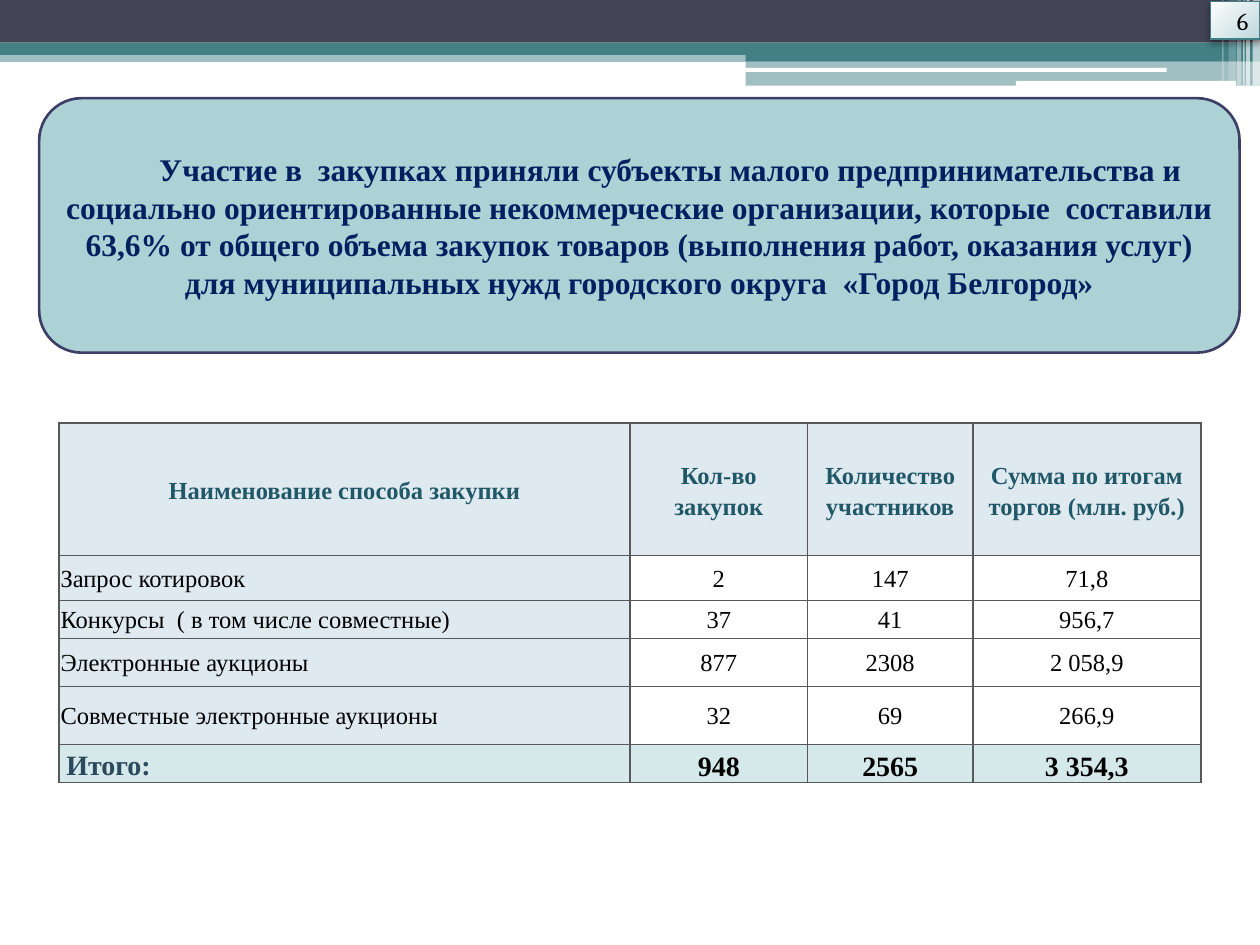
from lxml import etree
from pptx import Presentation
from pptx.dml.color import RGBColor
from pptx.enum.shapes import MSO_SHAPE
from pptx.enum.text import MSO_ANCHOR, PP_ALIGN
from pptx.oxml.ns import qn
from pptx.util import Cm, Pt

RECT, ROUND = MSO_SHAPE.RECTANGLE, MSO_SHAPE.ROUNDED_RECTANGLE
LEFT, CENTER = PP_ALIGN.LEFT, PP_ALIGN.CENTER
MIDDLE, BOTTOM = MSO_ANCHOR.MIDDLE, MSO_ANCHOR.BOTTOM

# Content
PAGE = "6"
CLAIM = (
    "Участие в  закупках приняли субъекты малого предпринимательства и "
    "социально ориентированные некоммерческие организации, которые  составили "
    "63,6% от общего объема закупок товаров (выполнения работ, оказания услуг) "
    "для муниципальных нужд городского округа  «Город Белгород»"
)
ROWS = [
    ("Наименование способа закупки", "Кол-во закупок",
     "Количество участников", "Сумма по итогам торгов (млн. руб.)"),
    ("Запрос котировок", "2", "147", "71,8"),
    ("Конкурсы  ( в том числе совместные)", "37", "41", "956,7"),
    ("Электронные аукционы", "877", "2308", "2 058,9"),
    ("Совместные электронные аукционы", "32", "69", "266,9"),
    ("Итого:", "948", "2565", "3 354,3"),
]
WIDTHS = (11.51, 3.58, 3.33, 4.6)
HEIGHTS = (2.67, 0.91, 0.76, 0.97, 1.17, 0.76)

# Colours and type
SERIF = "Times New Roman"
THEME = {
    "dark": "424456", "teal": "438086", "white": "FFFFFF",
    "panel": "ADD2D6", "edge": "3D3E66", "grid": "585858",
    "head": "DEE9F0", "sum": "D6E9EA", "glow": ("FEFEFE", "BFD9DD"),
    "type": {
        "page": {"name": "Cambria", "size": 14, "bold": False, "color": "000000"},
        "claim": {"name": SERIF, "size": 18, "bold": True, "color": "002060"},
        "head": {"name": SERIF, "size": 14, "bold": True, "color": "215868"},
        "body": {"name": SERIF, "size": 14, "bold": False, "color": "000000"},
        "total": {"name": SERIF, "size": 16, "bold": True, "color": "2B4A5E"},
        "sum": {"name": SERIF, "size": 16, "bold": True, "color": "000000"},
    },
}

# Top band: shape, left, top, width, height, colour, opacity in percent
BAND = [
    (RECT, 0, 1.02, 25.4, 0.23, "teal", 50),
    (RECT, 0, 0, 25.4, 0.86, "dark", 100),
    (RECT, 0, 0.86, 25.4, 0.25, "teal", 100),
    (RECT, 15.03, 0.99, 10.37, 0.24, "teal", 100),
    (RECT, 15.03, 1.23, 10.37, 0.5, "teal", 50),
    (ROUND, 15.02, 1.37, 8.5, 0.08, "white", 100),
    (ROUND, 20.48, 1.63, 4.44, 0.1, "white", 100),
]
# Glints on the right: left, width, height, opacity
GLINTS = [
    (25.25, 0.15, 1.73, 65), (25.12, 0.08, 1.73, 65), (25.06, 0.03, 1.73, 60),
    (24.94, 0.08, 1.73, 40), (24.77, 0.15, 1.63, 20), (24.64, 0.03, 1.63, 30),
]


def rgb(code):
    return RGBColor.from_string(code)


def node(up, tag, **attrs):
    return etree.SubElement(up, qn(tag), attrs)


def block(slide, kind, box, color=None, alpha=100, line=None, weight=1):
    shape = slide.shapes.add_shape(kind, *map(Cm, box))
    shape.shadow.inherit = False
    if color:
        shape.fill.solid()
        shape.fill.fore_color.rgb = rgb(color)
        if alpha < 100:
            tint = shape.fill._xPr.find(qn("a:solidFill"))[0]
            node(tint, "a:alpha", val=str(alpha * 1000))
    if line:
        shape.line.color.rgb = rgb(line)
        shape.line.width = Pt(weight)
    else:
        shape.line.fill.background()
    return shape


def write(frame, text, style, align=CENTER, space=None):
    para = frame.paragraphs[0]
    para.alignment = align
    para.line_spacing = space
    run = para.add_run()
    run.text = text
    for key, val in THEME["type"][style].items():
        if key == "color":
            run.font.color.rgb = rgb(val)
        else:
            setattr(run.font, key, Pt(val) if key == "size" else val)
    return para


def border(cell):
    props = cell._tc.get_or_add_tcPr()
    for i, side in enumerate(("a:lnL", "a:lnR", "a:lnT", "a:lnB")):
        line = etree.Element(qn(side), w=str(Pt(1)))
        node(node(line, "a:solidFill"), "a:srgbClr", val=THEME["grid"])
        props.insert(i, line)


def draw_band(slide):
    for kind, *box, color, alpha in BAND:
        shape = block(slide, kind, box, THEME[color], alpha)
    for left, width, high, alpha in GLINTS:
        block(slide, RECT, (left, 0, width, high), THEME["white"], alpha)


def draw_table(slide):
    table = slide.shapes.add_table(
        len(ROWS), len(WIDTHS), Cm(1.19), Cm(8.53),
        Cm(sum(WIDTHS)), Cm(sum(HEIGHTS))).table
    table.first_row = table.horz_banding = False
    for col, width in zip(table.columns, WIDTHS):
        col.width = Cm(width)
    last = len(ROWS) - 1
    for r, (row, high) in enumerate(zip(ROWS, HEIGHTS)):
        table.rows[r].height = Cm(high)
        for c, text in enumerate(row):
            cell = table.cell(r, c)
            head, total, first = r == 0, r == last, c == 0
            wide = head or (total and first)
            side = Cm(0.15 if wide else 0.03)
            form = {
                "margin_left": side, "margin_right": side,
                "margin_top": Cm(0 if wide else 0.03), "margin_bottom": 0,
                "vertical_anchor": BOTTOM if total and not first else MIDDLE,
            }
            for key, val in form.items():
                setattr(cell, key, val)
            fill = "sum" if total else "head" if head or first else None
            if fill:
                cell.fill.solid()
                cell.fill.fore_color.rgb = rgb(THEME[fill])
            else:
                cell.fill.background()
            border(cell)
            style = "head" if head else "body"
            if total:
                style = "total" if first else "sum"
            write(cell.text_frame, text, style,
                  LEFT if first and not head else CENTER, 1.15 if wide else None)


def draw_page(slide):
    badge = block(slide, RECT, (24.4, 0.03, 1, 0.76), line=THEME["teal"], weight=0.75)
    badge.fill.gradient()
    badge.fill.gradient_angle = 315
    for stop, color in zip(badge.fill.gradient_stops, THEME["glow"]):
        stop.color.rgb = rgb(color)
    fx = badge._element.spPr.find(qn("a:effectLst"))
    shade = node(fx, "a:outerShdw", blurRad=str(Pt(4.1)), dist=str(Pt(2)),
                 dir="5400000", rotWithShape="0")
    node(node(shade, "a:srgbClr", val="000000"), "a:alpha", val="40000")
    badge.text_frame.vertical_anchor = MIDDLE
    para = write(badge.text_frame, PAGE, "page")
    para._p.get_or_add_pPr().set("marL", str(Cm(0.3)))


def draw_claim(slide):
    panel = block(slide, ROUND, (0.79, 1.98, 24.2, 5.13), THEME["panel"],
                  line=THEME["edge"], weight=1.5)
    panel.text_frame.word_wrap = True
    panel.text_frame.vertical_anchor = MIDDLE
    para = write(panel.text_frame, CLAIM, "claim")
    para._p.get_or_add_pPr().set("indent", str(Cm(1.25)))


def main():
    deck = Presentation()
    deck.slide_width, deck.slide_height = Cm(25.4), Cm(19.05)
    slide = deck.slides.add_slide(deck.slide_layouts[6])
    for draw in (draw_band, draw_table, draw_page, draw_claim):
        draw(slide)
    deck.save("out.pptx")


if __name__ == "__main__":
    main()
